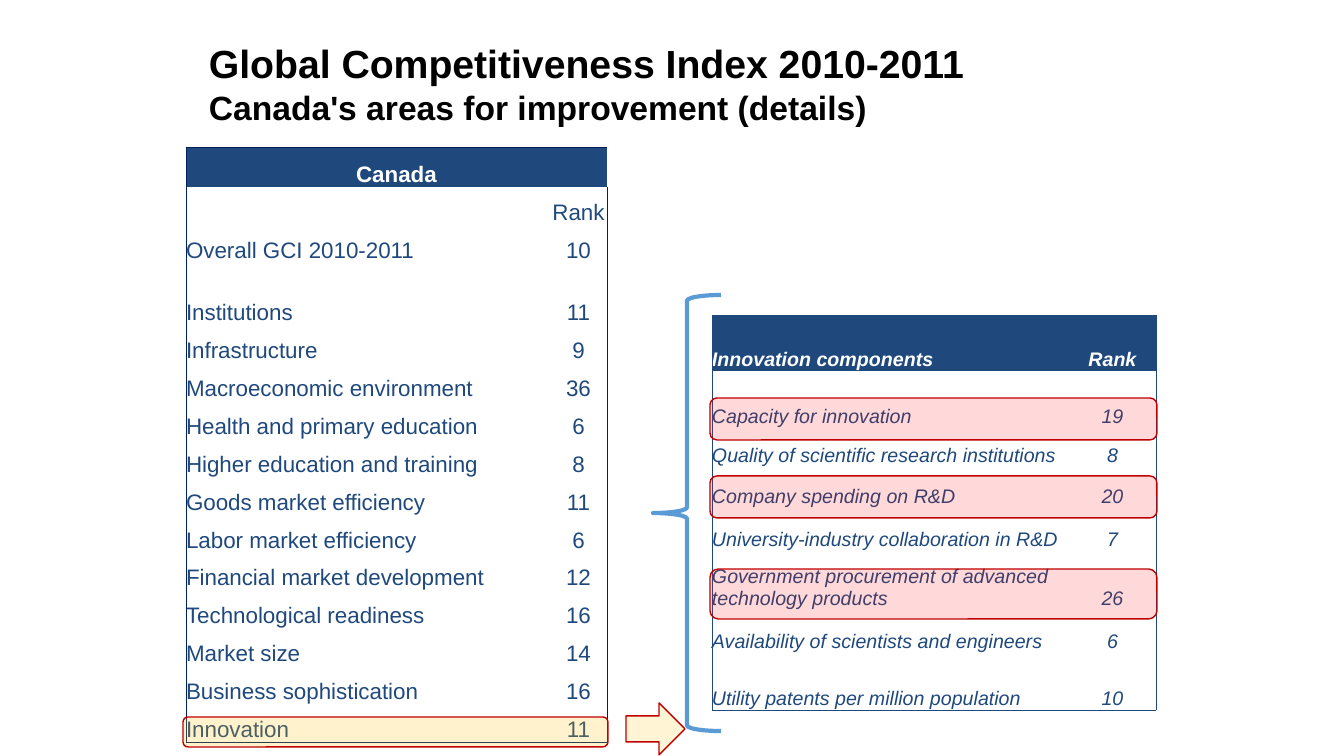
from pptx import Presentation
from pptx.dml.color import RGBColor as RGB
from pptx.enum.shapes import MSO_SHAPE as SHAPE
from pptx.enum.text import MSO_ANCHOR as ANCHOR, PP_ALIGN as ALIGN
from pptx.util import Pt
from lxml.etree import SubElement as Sub

PX = 9144000 / 1008
NS = "{http://schemas.openxmlformats.org/drawingml/2006/main}"
NAVY, WHITE, RED, GOLD = "1F497D", "FFFFFF", "C00000", "FFC000"


def px(*vals):
    return [round(v * PX) for v in vals]


def color(code):
    return RGB.from_string(code)


prs = Presentation()
prs.slide_width, prs.slide_height = px(1344, 756)
slide = prs.slides.add_slide(prs.slide_layouts[6])
shapes = slide.shapes

# Table contents
parts = [
    ("Innovation components", "Rank"),
    ("Capacity for innovation", "19"),
    ("Quality of scientific research institutions", "8"),
    ("Company spending on R&D", "20"),
    ("University-industry collaboration in R&D", "7"),
    ("Government procurement of advanced technology products", "26"),
    ("Availability of scientists and engineers", "6"),
    ("Utility patents per million population", "10"),
]
canada = [
    ("Canada", ""),
    ("", "Rank"),
    ("Overall GCI 2010-2011", "10"),
    ("", ""),
    ("Institutions", "11"),
    ("Infrastructure", "9"),
    ("Macroeconomic environment", "36"),
    ("Health and primary education", "6"),
    ("Higher education and training", "8"),
    ("Goods market efficiency", "11"),
    ("Labor market efficiency", "6"),
    ("Financial market development", "12"),
    ("Technological readiness", "16"),
    ("Market size", "14"),
    ("Business sophistication", "16"),
    ("Innovation", "11"),
]

# Both tables: rows, left, top, column widths, row heights, size, italic, frame
tables = [
    (parts, 712, 315, (357, 87), (56, 57, 39, 41, 43, 59, 43, 57),
     14, True, NAVY),
    (canada, 186, 147, (364, 57), (40, 38, 38, 24) + (38,) * 12,
     16, False, "002060"),
]
for rows, left, top, widths, heights, size, slant, edge in tables:
    box = px(left, top, sum(widths), sum(heights))
    table = shapes.add_table(len(rows), 2, *box).table
    table.horz_banding = False
    for col, width in zip(table.columns, px(*widths)):
        col.width = width
    for row, height in zip(table.rows, px(*heights)):
        row.height = height
    if rows is canada:
        table.cell(0, 0).merge(table.cell(0, 1))

    for r, row in enumerate(rows):
        for c, text in enumerate(row):
            cell = table.cell(r, c)
            cell.margin_left = cell.margin_right = 0
            cell.margin_top = cell.margin_bottom = 0
            cell.vertical_anchor = ANCHOR.BOTTOM

            # Frame on the outer sides only
            props = cell._tc.get_or_add_tcPr()
            sides = {"lnL": c == 0, "lnR": c == 1, "lnT": r == 0,
                     "lnB": r == len(rows) - 1}
            for side, outer in sides.items():
                line = Sub(props, NS + side, w=str(Pt(0.5)))
                if outer:
                    solid = Sub(line, NS + "solidFill")
                    Sub(solid, NS + "srgbClr", val=edge)
                else:
                    Sub(line, NS + "noFill")
            cell.fill.solid()
            cell.fill.fore_color.rgb = color(WHITE if r else NAVY)

            para = cell.text_frame.paragraphs[0]
            if not text:
                para._p.get_or_add_endParaRPr().set("sz", "1200")
                continue
            para.text = text
            if c or text == "Canada":
                para.alignment = ALIGN.CENTER
            font = para.runs[0].font
            font.name, font.size = "Arial", Pt(size)
            font.bold, font.italic = r == 0, slant
            font.color.rgb = color(NAVY if r else WHITE)

# Title
title = shapes.add_textbox(*px(209, 24, 773, 103)).text_frame
title.word_wrap = True
title.vertical_anchor = ANCHOR.BOTTOM
title.margin_left = title.margin_right = 0
title.margin_top = title.margin_bottom = 0
title.text = ("Global Competitiveness Index 2010-2011\n"
              "Canada's areas for improvement (details)")
for para, size in zip(title.paragraphs, (28, 24)):
    font = para.runs[0].font
    font.name, font.size, font.bold = "Arial", Pt(size), True
    font.color.rgb = color("000000")

# Brace, arrow and row highlights: kind, box, fill, opacity %, line, weight
marks = [
    (SHAPE.RIGHT_ARROW, (626, 703, 59, 52), GOLD, 17, RED, 1),
    (SHAPE.ROUNDED_RECTANGLE, (183, 717, 425, 30), GOLD, 20, RED, 1),
    (SHAPE.LEFT_BRACE, (653, 295, 68, 436), None, 0, "5B9BD5", 3),
]
for top, height in ((398, 42), (476, 42), (569, 50)):
    marks.append((SHAPE.ROUNDED_RECTANGLE, (710, top, 447, height),
                  "FF0000", 15, RED, 1))
for kind, box, fill, alpha, edge, weight in marks:
    mark = shapes.add_shape(kind, *px(*box))
    mark.shadow.inherit = False
    mark.line.color.rgb = color(edge)
    mark.line.width = Pt(weight)
    if fill:
        mark.fill.solid()
        mark.fill.fore_color.rgb = color(fill)
        tint = mark.fill._xPr.find(f"{NS}solidFill/{NS}srgbClr")
        Sub(tint, NS + "alpha", val=str(alpha * 1000))
    else:
        mark.fill.background()

prs.save("out.pptx")
